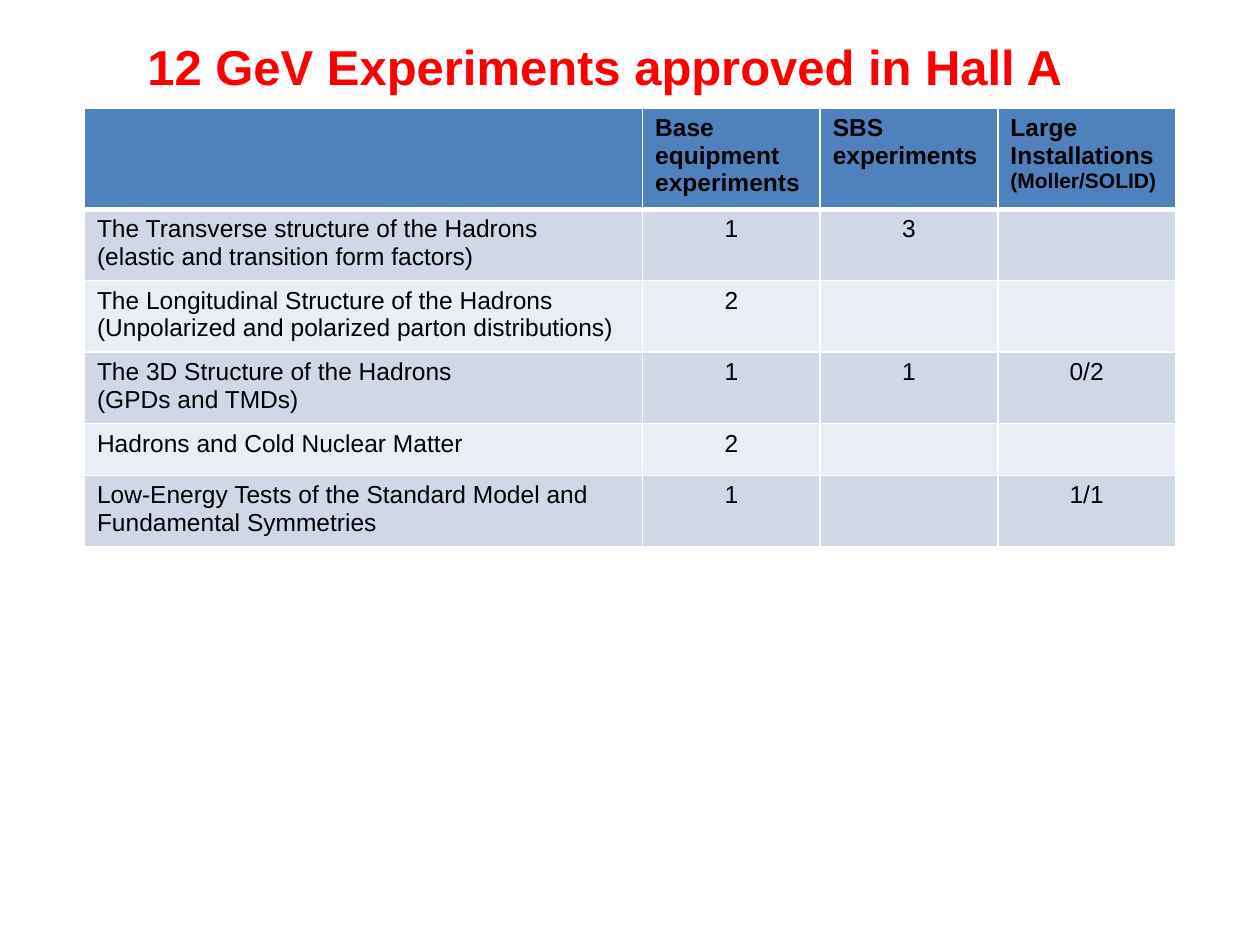
from lxml.etree import SubElement
from pptx import Presentation
from pptx.dml.color import RGBColor as RGB
from pptx.enum.text import PP_ALIGN
from pptx.oxml.ns import qn
from pptx.util import Inches, Pt

COLORS = {"title": "FF0000", "text": "000000", "header": "4F81BD",
          "odd": "D0D8E8", "even": "E9EDF4", "border": "FFFFFF"}
COL_WIDTHS = [4.43, 1.41, 1.41, 1.41]
ROW_HEIGHT = 0.41
ROWS = [
    ["", "Base equipment experiments", "SBS experiments",
     ("Large Installations ", "(Moller/SOLID)")],
    ["The Transverse structure of the Hadrons\n(elastic and transition form factors)",
     "1", "3", ""],
    ["The Longitudinal Structure of the Hadrons\n"
     "(Unpolarized and polarized parton distributions)", "2", "", ""],
    ["The 3D Structure of the Hadrons\n(GPDs and TMDs)", "1", "1", "0/2"],
    ["Hadrons and Cold Nuclear Matter", "2", "", ""],
    ["Low-Energy Tests of the Standard Model and Fundamental Symmetries",
     "1", "", "1/1"],
]


def set_font(p, size, color, bold):
    p.font.name = "Arial"
    p.font.size = Pt(size)
    p.font.bold = bold
    p.font.color.rgb = RGB.from_string(COLORS[color])


def set_borders(cell, widths):
    tcPr = cell._tc.get_or_add_tcPr()
    for i, (side, width) in enumerate(widths.items()):
        ln = SubElement(tcPr, qn(f"a:{side}"), w=str(Pt(width)))
        tcPr.insert(i, ln)
        fill = SubElement(ln, qn("a:solidFill"))
        SubElement(fill, qn("a:srgbClr"), val=COLORS["border"])


def add_title(s, x, y, w, h):
    tf = s.shapes.add_textbox(Inches(x), Inches(y), Inches(w), Inches(h)).text_frame
    tf.word_wrap = True
    tf.margin_top = Inches(0.09)
    tf.margin_right = Inches(0.42)
    p = tf.paragraphs[0]
    p.text = "12 GeV Experiments approved in Hall A"
    p.alignment = PP_ALIGN.CENTER
    set_font(p, 28, "title", True)


def fill_cell(cell, content, row, col):
    header = row == 0
    cell.fill.solid()
    band = "header" if header else "odd" if row % 2 else "even"
    cell.fill.fore_color.rgb = RGB.from_string(COLORS[band])
    set_borders(cell, {"lnL": 1, "lnR": 1, "lnT": 3 if row == 1 else 1,
                       "lnB": 3 if header else 1})
    if not content:
        return
    main, note = content if isinstance(content, tuple) else (content, "")
    tf = cell.text_frame
    tf.text = main
    for p in tf.paragraphs:
        set_font(p, 14, "text", header)
        if not header and col:
            p.alignment = PP_ALIGN.CENTER
    if note:
        r = tf.paragraphs[0].add_run()
        r.text = note
        r.font.size = Pt(12)


def add_experiments_table(s, x, y):
    table = s.shapes.add_table(
        len(ROWS), len(COL_WIDTHS), Inches(x), Inches(y),
        Inches(sum(COL_WIDTHS)), Inches(ROW_HEIGHT * len(ROWS))).table
    for column, width in zip(table.columns, COL_WIDTHS):
        column.width = Inches(width)
    for i, row in enumerate(ROWS):
        table.rows[i].height = Inches(ROW_HEIGHT)
        for j, content in enumerate(row):
            fill_cell(table.cell(i, j), content, i, j)


def main():
    prs = Presentation()
    prs.slide_width, prs.slide_height = Inches(10), Inches(7.5)
    s = prs.slides.add_slide(prs.slide_layouts[6])
    add_title(s, 0.67, 0.2, 8.58, 0.88)
    add_experiments_table(s, 0.67, 0.86)
    prs.save("out.pptx")


if __name__ == "__main__":
    main()
